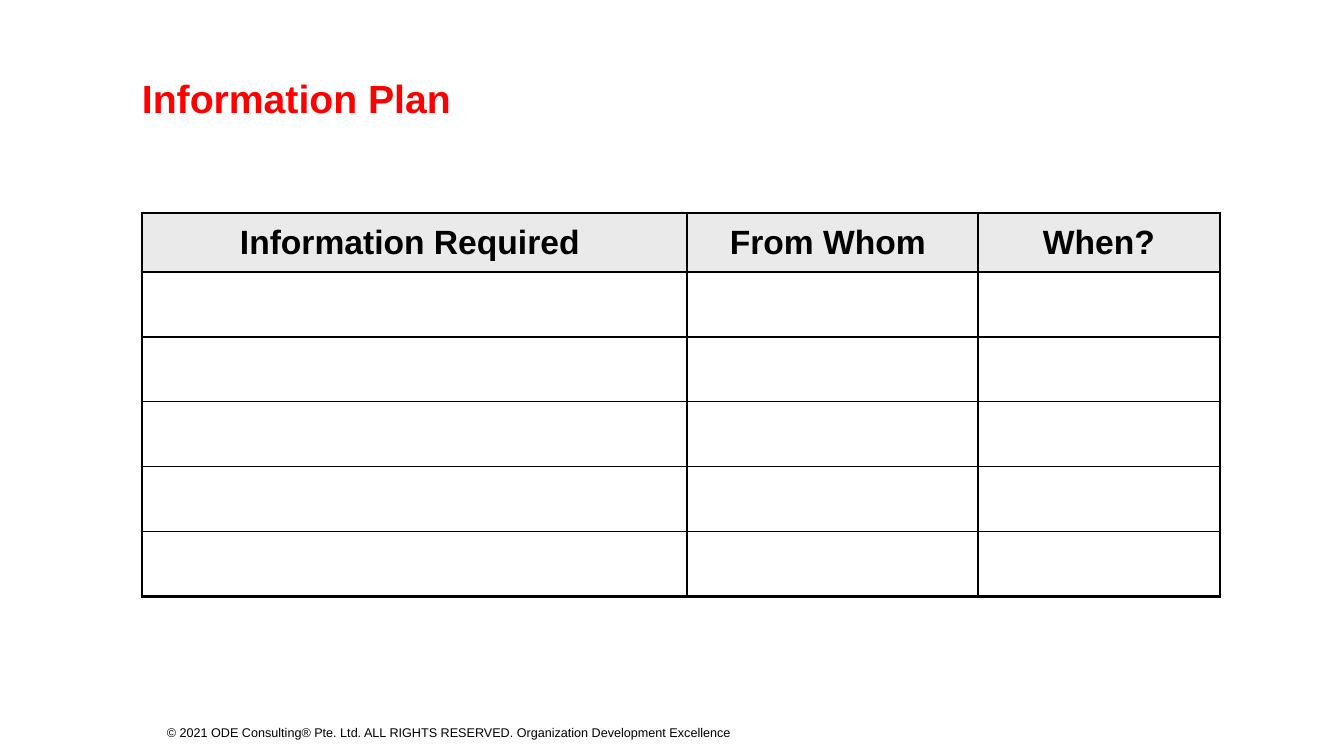
from lxml import etree
from pptx import Presentation
from pptx.dml.color import RGBColor
from pptx.enum.text import MSO_ANCHOR, MSO_AUTO_SIZE, PP_ALIGN
from pptx.oxml.ns import qn
from pptx.util import Pt

MID = MSO_ANCHOR.MIDDLE
LEFT, CENTER = PP_ALIGN.LEFT, PP_ALIGN.CENTER
FIXED = MSO_AUTO_SIZE.NONE
SCALE = 914400 / 100.8
BLACK = "000000"


def px(n):
    return round(n * SCALE)


def write(para, text, size, color, bold, align):
    para.alignment = align
    run = para.add_run()
    run.text = text
    font = run.font
    font.name, font.size, font.bold = "Arial", Pt(size), bold
    font.color.rgb = RGBColor.from_string(color)


deck = Presentation()
deck.slide_width, deck.slide_height = px(1344), px(756)
slide = deck.slides.add_slide(deck.slide_layouts[5])

foot = slide.shapes.add_textbox(px(157), px(720), px(743), px(25)).text_frame
foot.word_wrap = True
foot.vertical_anchor = MID
write(foot.paragraphs[0],
      "© 2021 ODE Consulting® Pte. Ltd. ALL RIGHTS RESERVED. Organization Development Excellence",
      9, BLACK, False, LEFT)

title = slide.shapes.title
title.left, title.top, title.width, title.height = px(142), px(61), px(1159), px(80)
frame = title.text_frame
frame.margin_left = frame.margin_top = frame.margin_right = frame.margin_bottom = 0
frame.auto_size = FIXED
frame.word_wrap = False
frame.vertical_anchor = MID
frame.paragraphs[0].line_spacing = 0.9
write(frame.paragraphs[0], "Information Plan", 28, "FF0000", True, LEFT)

heads = ["Information Required ", "From Whom ", "When?"]
widths = [545, 291, 242]
heights = [59] + [65] * 5
rows, cols = len(heights), len(widths)
table = slide.shapes.add_table(rows, cols, px(142), px(213),
                               px(sum(widths)), px(sum(heights))).table
table.first_row = table.horz_banding = False
for col, width in zip(table.columns, widths):
    col.width = px(width)
for row, height in zip(table.rows, heights):
    row.height = px(height)

for r in range(rows):
    for c in range(cols):
        cell = table.cell(r, c)
        cell.vertical_anchor = MID
        props = cell._tc.get_or_add_tcPr()
        edges = {"a:lnL": c == 0, "a:lnR": c == cols - 1,
                 "a:lnT": r == 0, "a:lnB": r == rows - 1}
        for tag, outer in edges.items():
            line = etree.SubElement(props, qn(tag), w=str(Pt(2.25 if outer else 1)))
            fill = etree.SubElement(line, qn("a:solidFill"))
            etree.SubElement(fill, qn("a:srgbClr"), val=BLACK)
        if r == 0:
            cell.fill.solid()
            cell.fill.fore_color.rgb = RGBColor.from_string("EAEAEA")
            write(cell.text_frame.paragraphs[0], heads[c], 24, BLACK, True, CENTER)
        else:
            cell.fill.background()

deck.save("out.pptx")
